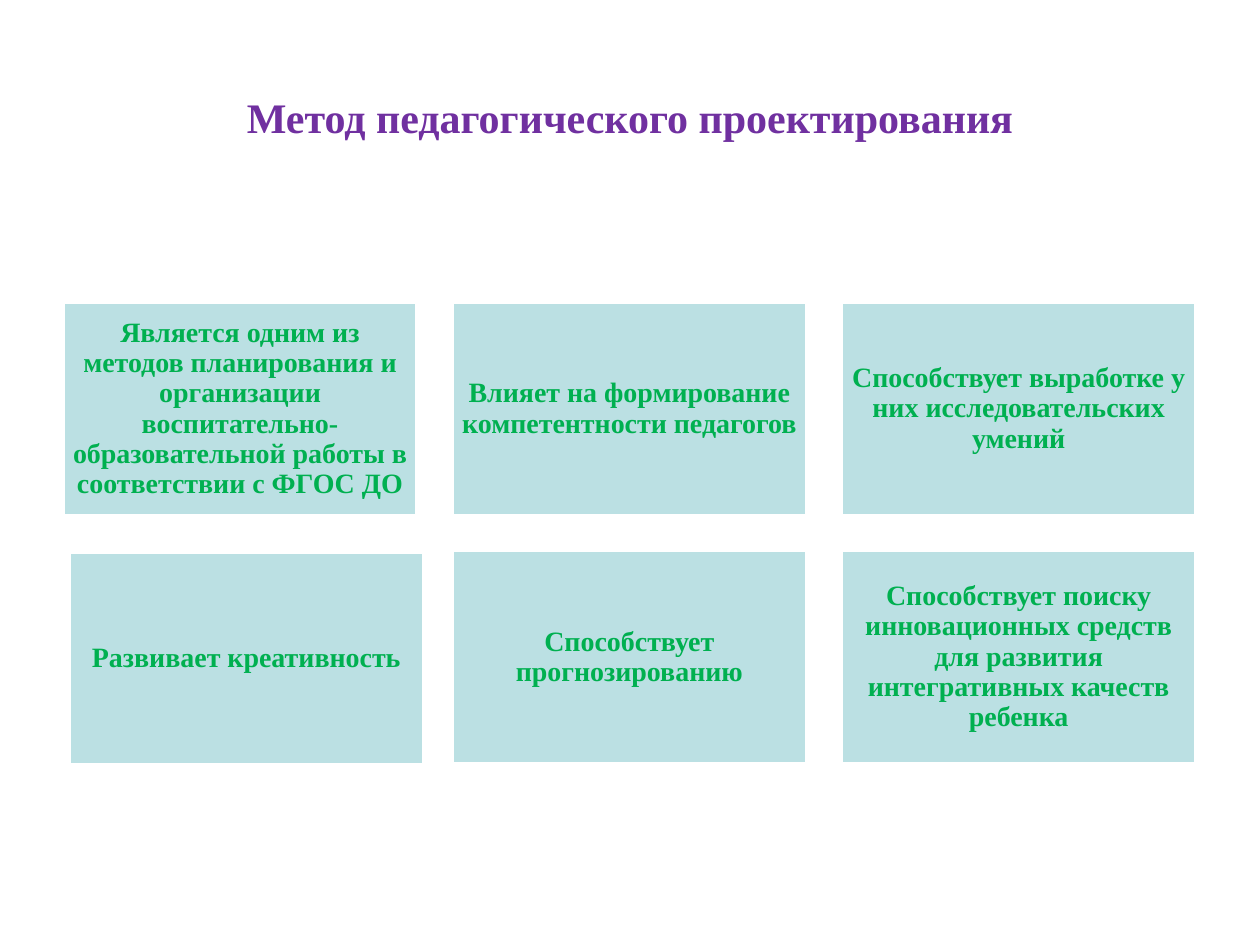
from dataclasses import dataclass

from pptx import Presentation
from pptx.dml.color import RGBColor
from pptx.enum.shapes import MSO_SHAPE
from pptx.enum.text import MSO_ANCHOR, PP_ALIGN
from pptx.util import Inches, Pt

MARGIN, TOP = 0.5, 2.4
CARD_WIDTH, CARD_HEIGHT, GAP = 2.81, 1.69, 0.28
FONT = "Times New Roman"


@dataclass(frozen=True)
class Card:
    """A statement with its grid cell and its offset from that cell in inches."""

    column: int
    row: int
    text: str
    shift_x: float = 0
    shift_y: float = 0


CARDS = [
    Card(0, 0, "Является одним из методов планирования и организации "
               "воспитательно-образовательной работы в соответствии с ФГОС ДО"),
    Card(1, 0, "Влияет на формирование компетентности педагогов"),
    Card(2, 0, "Способствует выработке у них исследовательских умений"),
    Card(0, 1, "Развивает креативность", shift_x=0.05, shift_y=0.01),
    Card(1, 1, "Способствует прогнозированию"),
    Card(2, 1, "Способствует поиску инновационных средств для развития "
               "интегративных качеств ребенка"),
]


def color(value: str) -> RGBColor:
    """Turn a hex string into a colour."""
    return RGBColor.from_string(value)


def write(shape, text: str, *, size: float, ink: str,
          inset: float = 0.1, spacing: float = 1.0) -> None:
    """Put bold, centred text in the middle of a shape."""
    frame = shape.text_frame
    frame.word_wrap = True
    frame.vertical_anchor = MSO_ANCHOR.MIDDLE
    frame.margin_left = frame.margin_right = Inches(inset)
    frame.margin_top = frame.margin_bottom = Inches(inset)
    para = frame.paragraphs[0]
    para.alignment = PP_ALIGN.CENTER
    para.line_spacing = spacing
    span = para.add_run()
    span.text = text
    span.font.name = FONT
    span.font.size = Pt(size)
    span.font.bold = True
    span.font.color.rgb = color(ink)


def draw_card(page, card: Card) -> None:
    """Draw one card in its grid cell."""
    left = MARGIN + card.column * (CARD_WIDTH + GAP) + card.shift_x
    top = TOP + card.row * (CARD_HEIGHT + GAP) + card.shift_y
    box = page.shapes.add_shape(
        MSO_SHAPE.RECTANGLE, Inches(left), Inches(top),
        Inches(CARD_WIDTH), Inches(CARD_HEIGHT))
    box.shadow.inherit = False
    box.fill.solid()
    box.fill.fore_color.rgb = color("BBE0E3")
    box.line.color.rgb = color("FFFFFF")
    box.line.width = Pt(2)
    write(box, card.text, size=16, ink="00B050", inset=0.07, spacing=0.9)


def main() -> None:
    """Build the slide and save it."""
    deck = Presentation()
    deck.slide_width, deck.slide_height = Inches(10), Inches(7.5)
    page = deck.slides.add_slide(deck.slide_layouts[6])
    title = page.shapes.add_textbox(
        Inches(MARGIN), Inches(0.3), deck.slide_width - 2 * Inches(MARGIN), Inches(1.25))
    write(title, "Метод педагогического проектирования", size=24, ink="7030A0")
    for card in CARDS:
        draw_card(page, card)
    deck.save("out.pptx")


if __name__ == "__main__":
    main()
